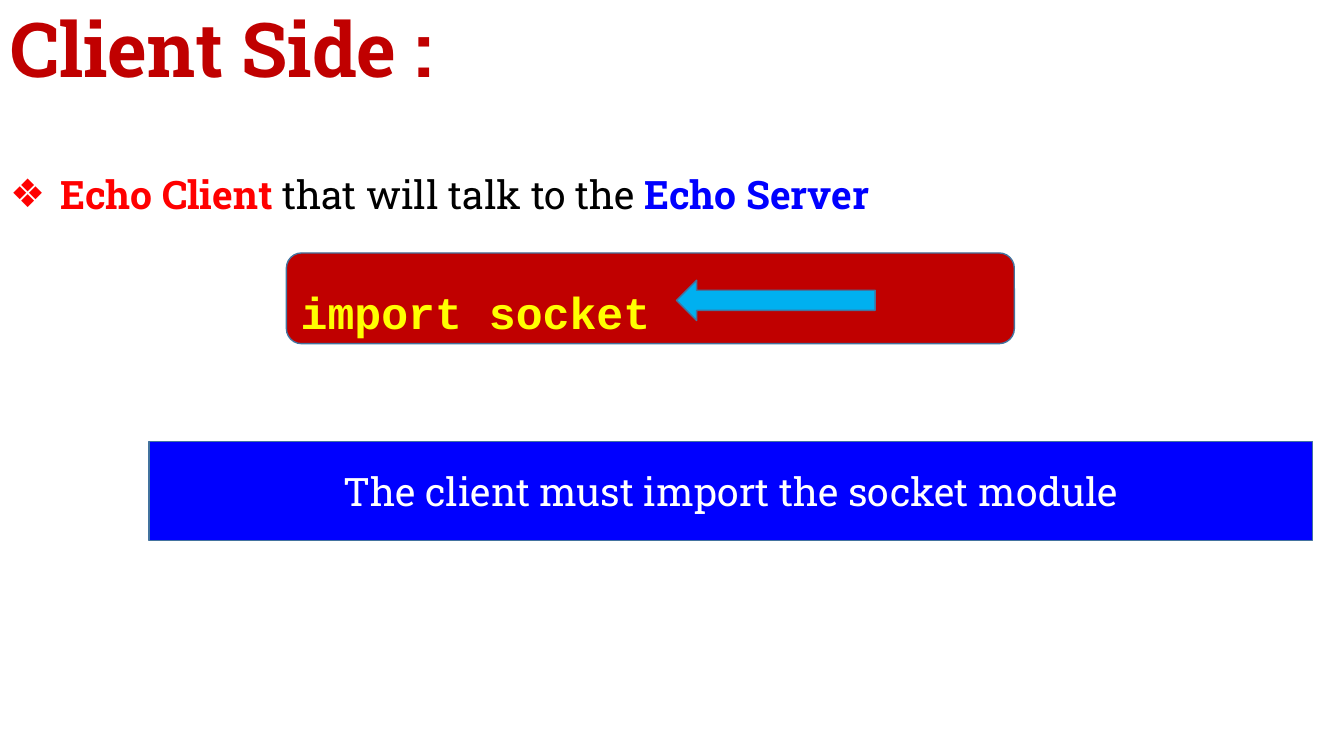
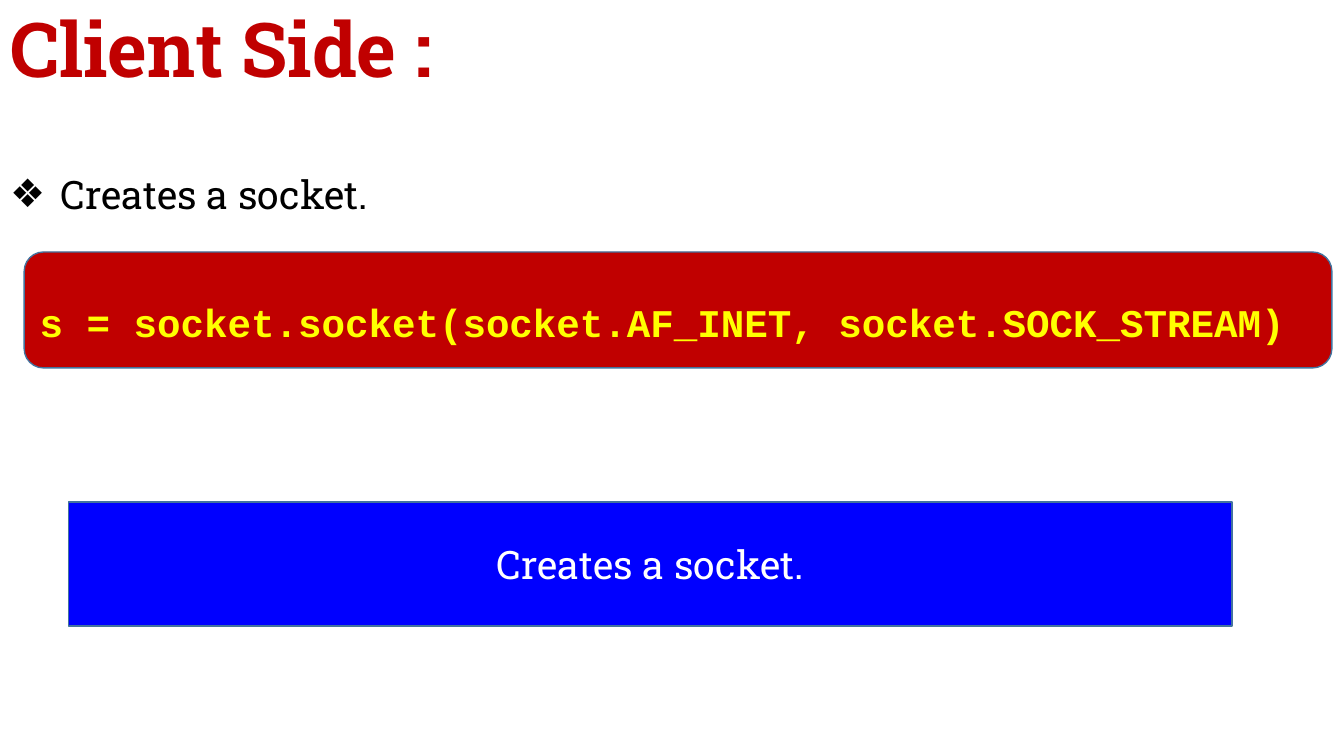
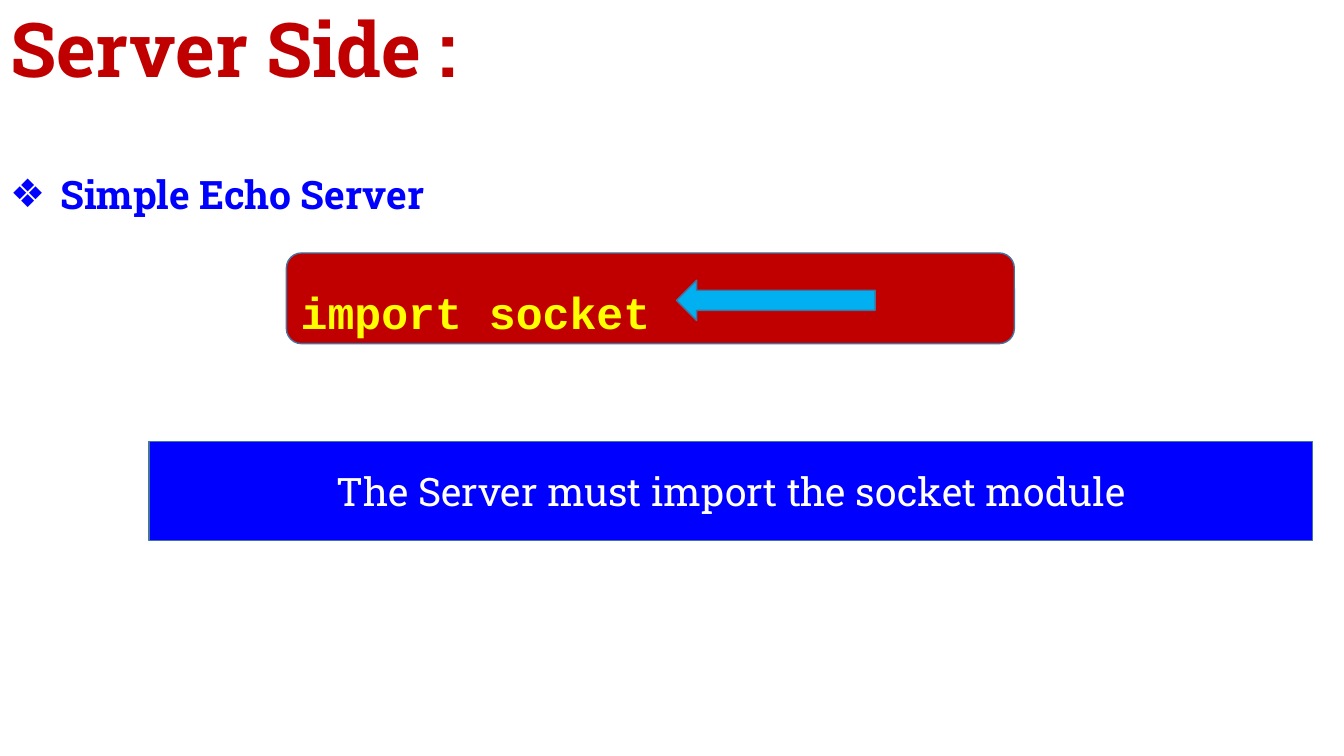
from dataclasses import dataclass

from lxml import etree
from pptx import Presentation
from pptx.dml.color import RGBColor
from pptx.enum.shapes import MSO_SHAPE
from pptx.enum.text import MSO_ANCHOR, MSO_AUTO_SIZE, PP_ALIGN
from pptx.oxml.ns import qn
from pptx.util import Pt

PX = 9144  # 100 px to the inch
RECT, ROUNDED, LEFT_ARROW = (
    MSO_SHAPE.RECTANGLE, MSO_SHAPE.ROUNDED_RECTANGLE, MSO_SHAPE.LEFT_ARROW)
TOP, MIDDLE = MSO_ANCHOR.TOP, MSO_ANCHOR.MIDDLE
LEFT, CENTER, JUSTIFY = PP_ALIGN.LEFT, PP_ALIGN.CENTER, PP_ALIGN.JUSTIFY
NO_AUTOFIT = MSO_AUTO_SIZE.NONE


@dataclass(frozen=True)
class Theme:
    font: str = "Roboto Slab"
    code_font: str = "Courier New"
    dark_red: str = "C00000"
    red: str = "FF0000"
    blue: str = "0000FF"
    black: str = "000000"
    white: str = "FFFFFF"
    yellow: str = "FFFF00"
    sky: str = "00B0F0"
    outline: str = "43739E"
    title_size: int = 54
    text_size: int = 28
    code_size: int = 32


THEME = Theme()
SLIDE_SIZE = (1333, 750)
TITLE_BOX = (0, 0, 1200, 105)
BULLET_BOX = (0, 117, 1333, 90)
BULLET_INDENT = 50


def emu(box):
    return [v * PX for v in box]


def place(sp, box):
    sp.left, sp.top, sp.width, sp.height = emu(box)


def write(sp, runs, anchor=MIDDLE, size=THEME.text_size, font=THEME.font, **layout):
    """Fill a shape with one paragraph of (text, colour, bold) runs."""
    tf = sp.text_frame
    for name, value in dict(word_wrap=True, auto_size=NO_AUTOFIT,
                            vertical_anchor=anchor).items():
        setattr(tf, name, value)
    p = tf.paragraphs[0]
    for name, value in dict(layout, space_before=Pt(0)).items():
        setattr(p, name, value)
    for text, color, bold in runs:
        r = p.add_run()
        r.text = text
        for name, value in dict(name=font, size=Pt(size), bold=bold).items():
            setattr(r.font, name, value)
        r.font.color.rgb = RGBColor.from_string(color)
    return p


def add_panel(slide, kind, box, fill):
    sp = slide.shapes.add_shape(kind, *emu(box))
    sp.shadow.inherit = False
    sp.fill.solid()
    sp.fill.fore_color.rgb = RGBColor.from_string(fill)
    sp.line.color.rgb = RGBColor.from_string(THEME.outline)
    sp.line.width = Pt(1)
    return sp


def add_title(slide, text):
    title = slide.shapes.title
    place(title, TITLE_BOX)
    write(title, [(text, THEME.dark_red, True)], size=THEME.title_size,
          alignment=LEFT, line_spacing=0.9)


def add_bullet(slide, runs):
    body = slide.placeholders[1]
    place(body, BULLET_BOX)
    p = write(body, runs, anchor=TOP, alignment=JUSTIFY, line_spacing=2.0)
    pPr = p._p.get_or_add_pPr()
    pPr.set("marL", str(BULLET_INDENT * PX))
    pPr.set("indent", str(-BULLET_INDENT * PX))
    etree.SubElement(pPr, qn("a:buChar")).set("char", "❖")


def add_code(slide, box, text, size):
    sp = add_panel(slide, ROUNDED, box, THEME.dark_red)
    write(sp, [(text, THEME.yellow, True)], size=size, font=THEME.code_font,
          alignment=LEFT, line_spacing=1.5)


def add_note(slide, box, text):
    sp = add_panel(slide, RECT, box, THEME.blue)
    write(sp, [(text, THEME.white, False)], alignment=CENTER)


def add_step(prs, title, bullet):
    slide = prs.slides.add_slide(prs.slide_layouts[1])
    add_title(slide, title)
    add_bullet(slide, bullet)
    return slide


def import_slide(prs, title, bullet, note):
    slide = add_step(prs, title, bullet)
    x, y, w, h = code_box = (284, 251, 722, 90)
    add_code(slide, code_box, "import socket", THEME.code_size)
    add_panel(slide, LEFT_ARROW, (x + 387, y + 27, 197, 40), THEME.sky)
    add_note(slide, (148, 438, 1154, 98), note)


def create_slide(prs, title, text):
    slide = add_step(prs, title, [(text, THEME.black, False)])
    add_code(slide, (24, 250, 1297, 115),
             "s = socket.socket(socket.AF_INET, socket.SOCK_STREAM)", THEME.text_size)
    add_note(slide, (68, 498, 1154, 123), text)


def main():
    prs = Presentation()
    prs.slide_width, prs.slide_height = emu(SLIDE_SIZE)
    import_slide(prs, "Client Side :",
                 [("Echo Client ", THEME.red, True),
                  ("that will talk to the ", THEME.black, False),
                  ("Echo Server", THEME.blue, True)],
                 "The client must import the socket module")
    create_slide(prs, "Client Side :", "Creates a socket.")
    import_slide(prs, "Server Side :",
                 [("Simple Echo Server", THEME.blue, True)],
                 "The Server must import the socket module")
    prs.save("out.pptx")


if __name__ == "__main__":
    main()
